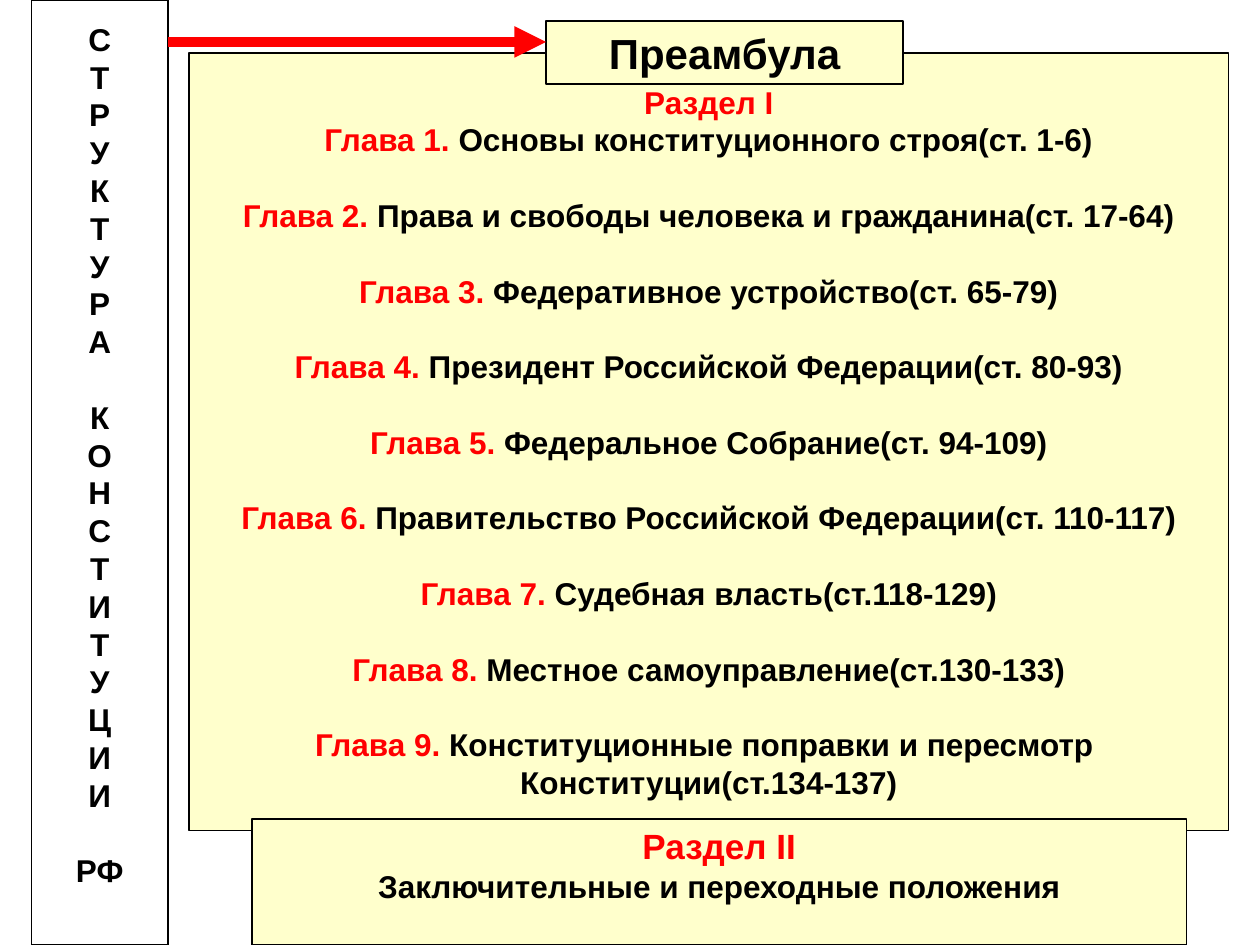
from lxml import etree
from pptx import Presentation
from pptx.dml.color import RGBColor
from pptx.enum.shapes import MSO_CONNECTOR, MSO_SHAPE
from pptx.enum.text import MSO_ANCHOR, PP_ALIGN
from pptx.oxml.ns import qn
from pptx.util import Pt

RECTANGLE = MSO_SHAPE.RECTANGLE
STRAIGHT = MSO_CONNECTOR.STRAIGHT
TOP = MSO_ANCHOR.TOP
CENTER = PP_ALIGN.CENTER

COLORS = {"red": "FF0000", "black": "000000", "cream": "FFFFCC", "white": "FFFFFF"}
FONT = {"name": "Arial", "bold": True}
LINE_PITCH = 1.2
BODY_SIZE = 18

CHAPTERS = [
    "Основы конституционного строя(ст. 1-6)",
    "Права и свободы человека и гражданина(ст. 17-64)",
    "Федеративное устройство(ст. 65-79)",
    "Президент Российской Федерации(ст. 80-93)",
    "Федеральное Собрание(ст. 94-109)",
    "Правительство Российской Федерации(ст. 110-117)",
    "Судебная власть(ст.118-129)",
    "Местное самоуправление(ст.130-133)",
    "Конституционные поправки и пересмотр ",
]
CHAPTER_ENDING = "Конституции(ст.134-137)"
TITLE_STACKS = [list("СТРУКТУРА"), list("КОНСТИТУЦИИ"), ["РФ"]]


def line_of(*runs, size=BODY_SIZE, gap=False):
    return {"runs": runs, "size": size, "gap": gap}


chapter_lines = [
    line_of((f"Глава {number}.", "red"), (f" {title}", "black"), gap=number > 1)
    for number, title in enumerate(CHAPTERS, 1)
]
title_lines = [
    line_of((letters, "black"), gap=stack > 0 and position == 0)
    for stack, word in enumerate(TITLE_STACKS)
    for position, letters in enumerate(word)
]

BOXES = [
    {"at": (108, 30.24, 594, 444.24), "fill": "cream", "inset": 17,
     "lines": [line_of(("Раздел I", "red")), *chapter_lines,
               line_of((CHAPTER_ENDING, "black"))]},
    {"at": (312, 12, 204, 36), "fill": "cream", "inset": 4,
     "lines": [line_of(("Преамбула", "black"), size=24)]},
    {"at": (144, 468, 534, 72), "fill": "cream", "inset": 3.4,
     "lines": [line_of(("Раздел II", "red"), size=20),
               line_of(("Заключительные и переходные положения", "black"))]},
    {"at": (18, 0, 78, 540), "fill": "white", "inset": 11.4, "lines": title_lines},
]
ARROW = {"start": (96, 24), "end": (312, 24), "width": 6}


def rgb(name):
    return RGBColor.from_string(COLORS[name])


def set_all(target, values):
    for name, value in values.items():
        setattr(target, name, value)


def add_line(paragraph, line):
    pitch = Pt(line["size"] * LINE_PITCH)
    set_all(paragraph, {"alignment": CENTER, "line_spacing": pitch,
                        "space_before": pitch if line["gap"] else Pt(0)})
    for text, color in line["runs"]:
        run = paragraph.add_run()
        run.text = text
        set_all(run.font, {**FONT, "size": Pt(line["size"])})
        run.font.color.rgb = rgb(color)


def add_box(slide, box):
    shape = slide.shapes.add_shape(RECTANGLE, *map(Pt, box["at"]))
    shape.shadow.inherit = False
    shape.fill.solid()
    shape.fill.fore_color.rgb = rgb(box["fill"])
    shape.line.color.rgb = rgb("black")
    shape.line.width = Pt(0.75)
    frame = shape.text_frame
    set_all(frame, {"word_wrap": False, "vertical_anchor": TOP,
                    "margin_top": Pt(box["inset"]), "margin_bottom": Pt(0)})
    for index, line in enumerate(box["lines"]):
        add_line(frame.add_paragraph() if index else frame.paragraphs[0], line)


def add_arrow(slide, arrow):
    connector = slide.shapes.add_connector(
        STRAIGHT, *map(Pt, arrow["start"] + arrow["end"]))
    connector.line.color.rgb = rgb("red")
    connector.line.width = Pt(arrow["width"])
    etree.SubElement(connector.line._get_or_add_ln(), qn("a:tailEnd"), type="triangle")
    etree.SubElement(connector._element.spPr, qn("a:effectLst"))


def main():
    presentation = Presentation()
    presentation.slide_width, presentation.slide_height = Pt(720), Pt(540)
    slide = presentation.slides.add_slide(presentation.slide_layouts[6])
    for box in BOXES:
        add_box(slide, box)
    add_arrow(slide, ARROW)
    presentation.save("out.pptx")


if __name__ == "__main__":
    main()
